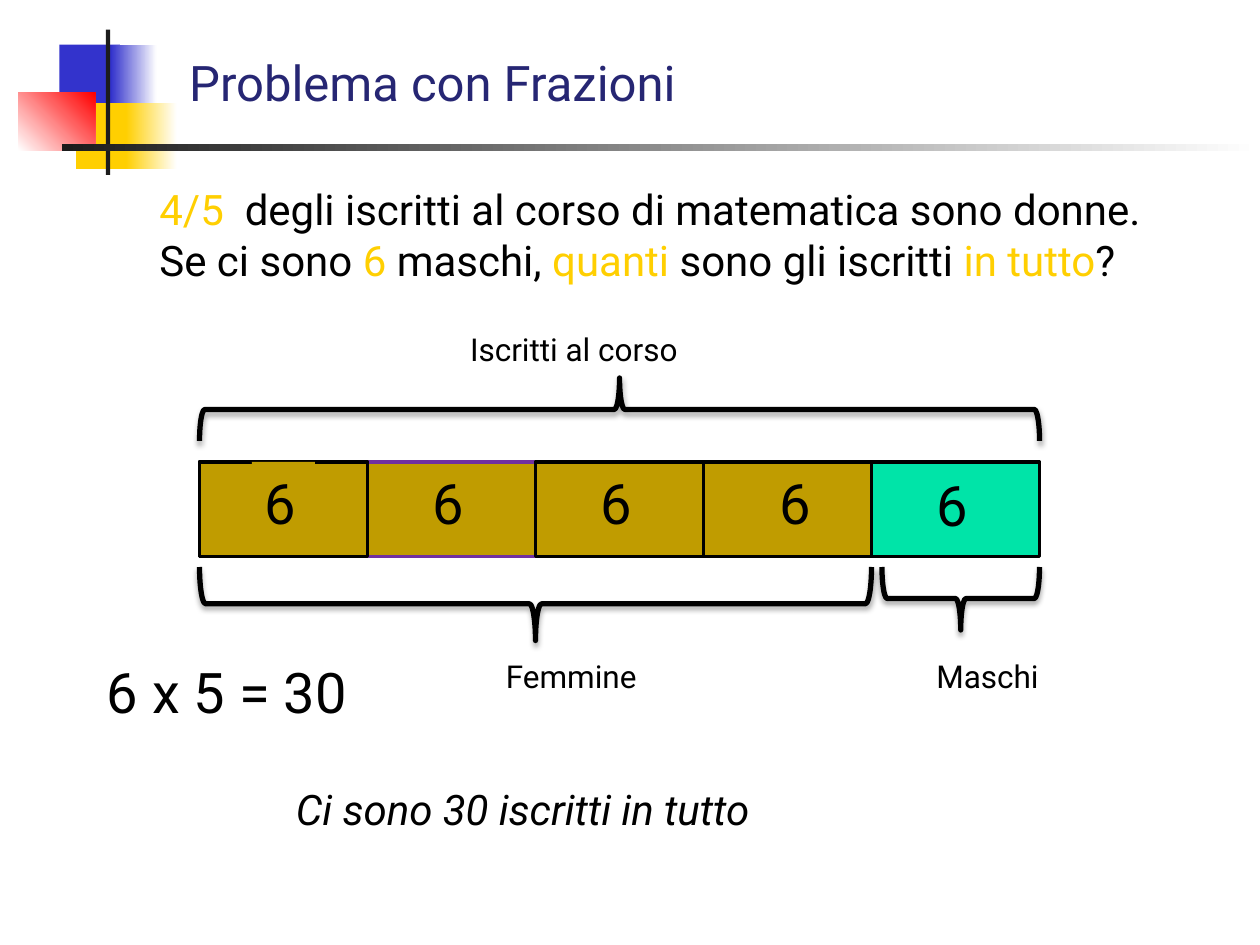
"""Build a slide that solves a fraction problem with a bar divided into fifths."""
from dataclasses import dataclass

from lxml.etree import SubElement
from pptx import Presentation
from pptx.dml.color import RGBColor
from pptx.enum.shapes import MSO_SHAPE as Shape
from pptx.enum.text import MSO_AUTO_SIZE as AutoSize
from pptx.oxml.ns import qn
from pptx.slide import Slide
from pptx.util import Pt

BLACK = RGBColor(0x00, 0x00, 0x00)
WHITE = RGBColor(0xFF, 0xFF, 0xFF)
INK = RGBColor(0x1C, 0x1C, 0x1C)
NAVY = RGBColor(0x26, 0x26, 0x73)
BLUE = RGBColor(0x33, 0x33, 0xCC)
YELLOW = RGBColor(0xFF, 0xCF, 0x01)
RED = RGBColor(0xFF, 0x00, 0x00)
OCHRE = RGBColor(0xC0, 0x9C, 0x00)
GREEN = RGBColor(0x00, 0xE4, 0xA8)
PURPLE = RGBColor(0x70, 0x30, 0xA0)


@dataclass
class Board:
    """Hold the slide and its style, and draw each kind of element."""

    slide: Slide
    font: str = "Roboto"

    def rect(self, frame, fill, line=None):
        """Draw a plain rectangle with an optional outline."""
        box = self.slide.shapes.add_shape(Shape.RECTANGLE, *map(Pt, frame))
        box.shadow.inherit = False
        box.fill.solid()
        box.fill.fore_color.rgb = fill
        if line is None:
            box.line.fill.background()
        else:
            box.line.color.rgb = line
            box.line.width = Pt(2)
        return box

    def fade(self, frame, start, end, angle=0):
        """Draw a rectangle that fades from one colour to another."""
        fill = self.rect(frame, start).fill
        fill.gradient()
        fill.gradient_angle = angle
        for stop, color in zip(fill.gradient_stops, (start, end)):
            stop.color.rgb = color

    def brace(self, frame, rotation):
        """Draw a horizontal brace that fills the frame as it is seen."""
        left, top, width, height = frame
        shift = (width - height) / 2
        turned = (left + shift, top - shift, height, width)
        brace = self.slide.shapes.add_shape(Shape.LEFT_BRACE, *map(Pt, turned))
        brace.rotation = rotation
        brace.fill.background()
        brace.line.color.rgb = BLACK
        brace.line.width = Pt(3)
        brace.shadow.inherit = False
        effects = brace.element.spPr.find(qn("a:effectLst"))
        shadow = SubElement(effects, qn("a:outerShdw"), blurRad=str(Pt(3.1)),
                            dist=str(Pt(1.8)), dir="5400000", rotWithShape="0")
        tint = SubElement(shadow, qn("a:srgbClr"), val=str(BLACK))
        SubElement(tint, qn("a:alpha"), val="35000")

    def text(self, frame, runs, size, fill=None, italic=None):
        """Write one paragraph of (words, colour) runs."""
        box = self.slide.shapes.add_textbox(*map(Pt, frame))
        if fill is not None:
            box.fill.solid()
            box.fill.fore_color.rgb = fill
        box.text_frame.word_wrap = True
        box.text_frame.auto_size = AutoSize.SHAPE_TO_FIT_TEXT
        style = {"name": self.font, "size": Pt(size), "italic": italic}
        for words, color in runs:
            run = box.text_frame.paragraphs[0].add_run()
            run.text = words
            run.font.color.rgb = color
            for attribute, value in style.items():
                setattr(run.font, attribute, value)


def main():
    """Draw the slide and save it."""
    deck = Presentation()
    deck.slide_width, deck.slide_height = Pt(720), Pt(540)
    board = Board(deck.slides.add_slide(deck.slide_layouts[6]))

    question = [
        ("4/5  ", YELLOW),
        ("degli iscritti al corso di matematica sono donne.  Se ci sono ", BLACK),
        ("6 ", YELLOW), ("maschi, ", BLACK), ("quanti ", YELLOW),
        ("sono gli iscritti ", BLACK), ("in tutto", YELLOW), ("?", BLACK),
    ]
    board.text((84, 101.5, 600, 65.5), question, 24)

    bar_left, bar_top, part, bar_height = 114, 264, 96, 54
    board.rect((bar_left, bar_top, 5 * part, bar_height), GREEN, BLACK)
    for index, outline in ((1, PURPLE), (2, BLACK), (0, BLACK), (3, BLACK)):
        board.rect((bar_left + index * part, bar_top, part, bar_height),
                   OCHRE, outline)

    board.brace((bar_left, 216, 5 * part, 36), 90)
    board.brace((bar_left, 324, 4 * part, 42), 270)
    board.brace((504, 324, 90, 36), 270)

    for words, left, top, width in (("Iscritti al corso", 261.5, 185, 204),
                                    ("Femmine", 282, 372, 127),
                                    ("Maschi", 528, 372, 96.5)):
        board.text((left, top, width, 29), [(words, BLACK)], 18)

    for left, top, width, fill in ((144, 264, 36, OCHRE), (240, 264, 32.5, None),
                                   (336, 264, 36, None), (438.5, 264, 24, None),
                                   (528, 265.5, 36, None)):
        board.text((left, top, width, 46), [("6", BLACK)], 32, fill)

    board.text((54, 372, 174, 46), [("6 x 5 = 30", BLACK)], 32)
    board.text((162, 444, 372, 36.5),
               [("Ci sono 30 iscritti in tutto", BLACK)], 24, italic=True)

    board.rect((34, 25.5, 34.5, 37.5), BLUE)
    board.fade((63.5, 25.5, 26, 37.5), BLUE, WHITE)
    board.rect((43.5, 59, 33, 37.5), YELLOW)
    board.fade((72, 59, 29, 37.5), YELLOW, WHITE)
    board.fade((10.5, 53, 44, 33), WHITE, RED, 45)
    board.rect((60.5, 17, 2.5, 83), INK)
    board.fade((35.5, 82, 684.5, 4.5), INK, WHITE)
    board.text((101, 26.5, 311, 41), [("Problema con Frazioni", NAVY)], 28)

    deck.save("out.pptx")


if __name__ == "__main__":
    main()
